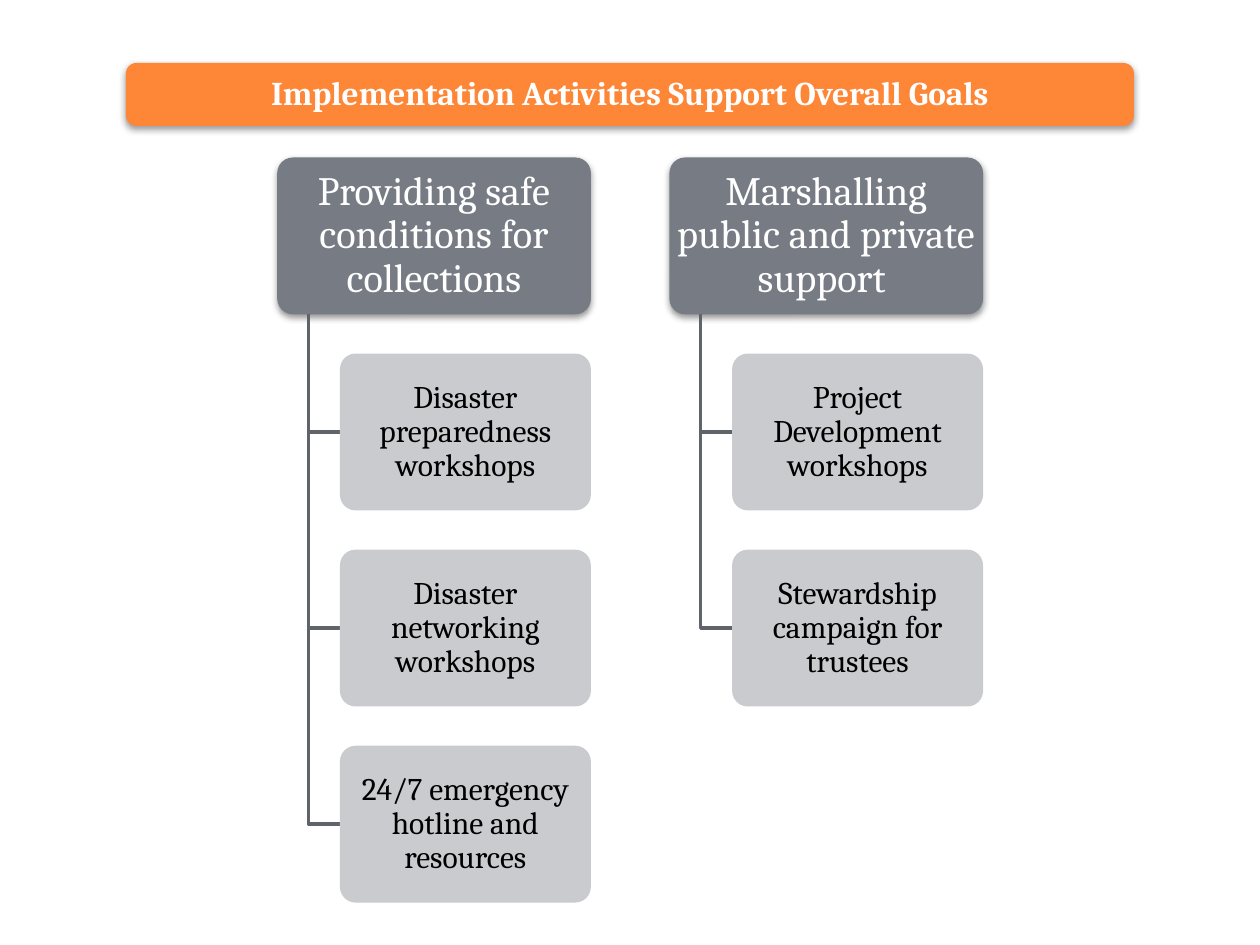
from dataclasses import dataclass

from lxml import etree
from pptx import Presentation
from pptx.dml.color import RGBColor
from pptx.enum.shapes import MSO_SHAPE
from pptx.enum.text import MSO_ANCHOR, PP_ALIGN
from pptx.oxml.ns import qn
from pptx.util import Pt

ROUNDED = MSO_SHAPE.ROUNDED_RECTANGLE
MIDDLE = MSO_ANCHOR.MIDDLE
CENTER = PP_ALIGN.CENTER

FONT = "Cambria"
LINE_COLOR = "5F636A"
BOX_HEIGHT = 89.64
GOAL_WIDTH = 2 * BOX_HEIGHT
ROW_PITCH = 1.25 * BOX_HEIGHT
COLUMN_PITCH = 1.25 * GOAL_WIDTH
TRUNK_INDENT = 0.1 * GOAL_WIDTH
ACTIVITY_INDENT = 0.2 * GOAL_WIDTH
GOALS_LEFT = 158.4
GOALS_TOP = 90


@dataclass(frozen=True)
class BoxStyle:
    fill: str
    text_color: str
    size: float
    corner: float
    inset: float
    bold: bool = False
    shadow: bool = False


@dataclass(frozen=True)
class Goal:
    title: str
    activities: tuple[str, ...]


BANNER = BoxStyle("FE8637", "FFFFFF", 19, 0.1667, 4, bold=True, shadow=True)
GOAL = BoxStyle("777C84", "FFFFFF", 23, 0.1, 1, shadow=True)
ACTIVITY = BoxStyle("C9CBCE", "000000", 18, 0.1, 0.3)

GOALS = (
    Goal(
        "Providing safe conditions for collections",
        (
            "Disaster preparedness workshops",
            "Disaster networking workshops",
            "24/7 emergency hotline and resources",
        ),
    ),
    Goal(
        "Marshalling public and private support ",
        ("Project\nDevelopment\nworkshops", "Stewardship campaign for trustees"),
    ),
)


def color(value: str) -> RGBColor:
    return RGBColor.from_string(value)


def add_shadow(shape) -> None:
    effects = shape._element.spPr.find(qn("a:effectLst"))
    shadow = etree.SubElement(
        effects,
        qn("a:outerShdw"),
        blurRad=str(Pt(4)),
        dist=str(Pt(1.6)),
        dir="5400000",
        algn="ctr",
        rotWithShape="0",
    )
    black = etree.SubElement(shadow, qn("a:srgbClr"), val="000000")
    etree.SubElement(black, qn("a:alpha"), val="42000")


def add_box(slide, text: str, left: float, top: float, width: float,
            height: float, style: BoxStyle) -> None:
    shape = slide.shapes.add_shape(ROUNDED, Pt(left), Pt(top), Pt(width), Pt(height))
    shape.adjustments[0] = style.corner
    shape.fill.solid()
    shape.fill.fore_color.rgb = color(style.fill)
    shape.line.fill.background()
    shape.shadow.inherit = False
    if style.shadow:
        add_shadow(shape)
    frame = shape.text_frame
    frame.word_wrap = True
    frame.vertical_anchor = MIDDLE
    frame.margin_left = frame.margin_right = Pt(style.inset)
    frame.margin_top = frame.margin_bottom = Pt(0)
    frame.text = text
    for paragraph in frame.paragraphs:
        paragraph.alignment = CENTER
        paragraph.line_spacing = 0.9
        paragraph.font.name = FONT
        paragraph.font.size = Pt(style.size)
        paragraph.font.bold = style.bold
        paragraph.font.color.rgb = color(style.text_color)


def add_branch(slide, left: float, top: float, right: float, bottom: float) -> None:
    builder = slide.shapes.build_freeform(Pt(left), Pt(top))
    builder.add_line_segments(
        [(Pt(left), Pt(bottom)), (Pt(right), Pt(bottom))], close=False
    )
    branch = builder.convert_to_shape()
    branch.fill.background()
    branch.line.color.rgb = color(LINE_COLOR)
    branch.line.width = Pt(2)
    branch.shadow.inherit = False


def add_goal(slide, goal: Goal, left: float) -> None:
    add_box(slide, goal.title, left, GOALS_TOP, GOAL_WIDTH, BOX_HEIGHT, GOAL)
    activity_left = left + ACTIVITY_INDENT
    for row, activity in enumerate(goal.activities, start=1):
        top = GOALS_TOP + row * ROW_PITCH
        add_branch(slide, left + TRUNK_INDENT, GOALS_TOP + BOX_HEIGHT,
                   activity_left, top + BOX_HEIGHT / 2)
        add_box(slide, activity, activity_left, top,
                GOAL_WIDTH - ACTIVITY_INDENT, BOX_HEIGHT, ACTIVITY)


def main() -> None:
    presentation = Presentation()
    presentation.slide_width = Pt(720)
    presentation.slide_height = Pt(540)
    slide = presentation.slides.add_slide(presentation.slide_layouts[6])
    for column, goal in enumerate(GOALS):
        add_goal(slide, goal, GOALS_LEFT + column * COLUMN_PITCH)
    add_box(slide, "Implementation Activities Support Overall Goals",
            72, 36, 576, 36, BANNER)
    presentation.save("out.pptx")


if __name__ == "__main__":
    main()
